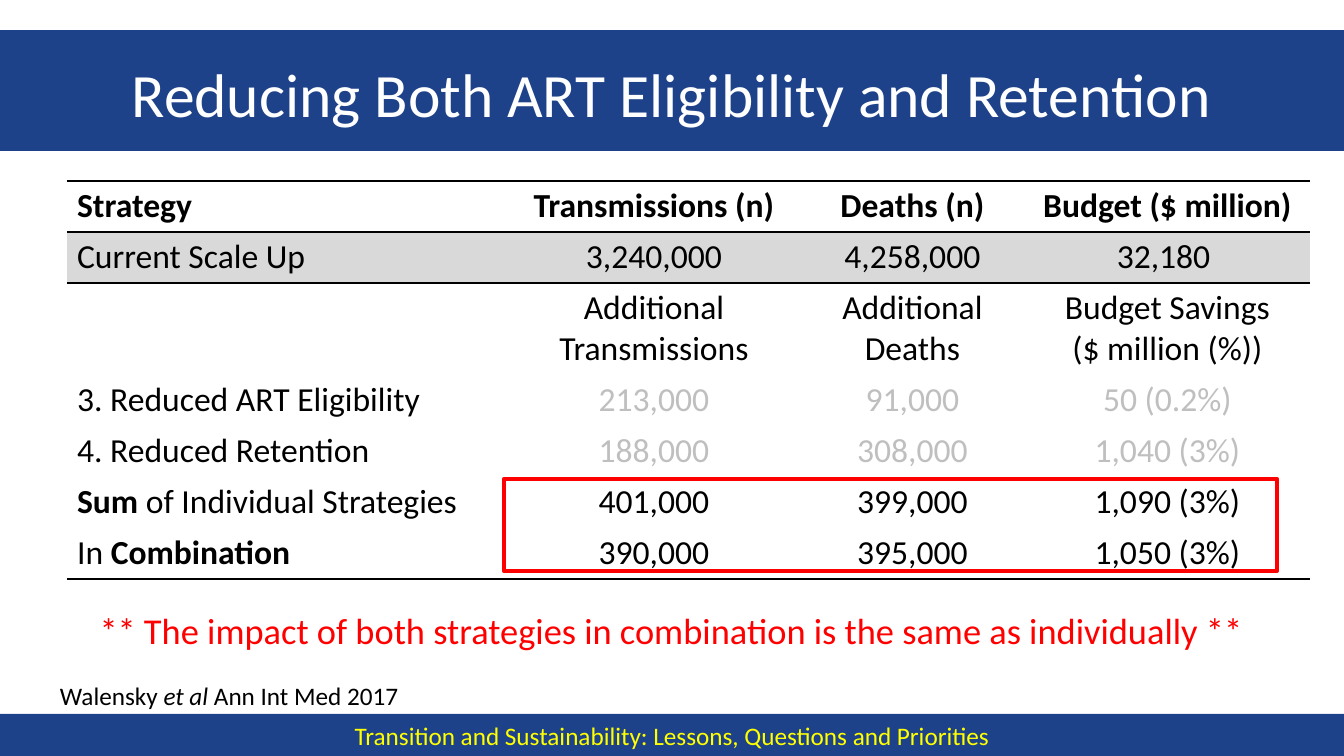
"""Build the slide on reducing both ART eligibility and retention."""
from lxml import etree
from pptx import Presentation
from pptx.dml.color import RGBColor
from pptx.enum.shapes import MSO_SHAPE as SHAPE
from pptx.enum.text import MSO_ANCHOR as ANCHOR, PP_ALIGN as ALIGN
from pptx.oxml import parse_xml
from pptx.oxml.ns import nsdecls, qn

PX = 914400 / 100.8
BLUE, GREY, BLACK, RED = "1E428A", "BFBFBF", "000000", "FF0000"
rgb = RGBColor.from_string


def box(left, top, width, height):
    return [round(v * PX) for v in (left, top, width, height)]


def write(tf, text, size=24, color=BLACK, align=ALIGN.CENTER, bold=False, emphasis="bold"):
    """Write lines of text; the parts between bars get the emphasis."""
    tf.word_wrap = True
    for i, line in enumerate(text.split("\n")):
        p = tf.add_paragraph() if i else tf.paragraphs[0]
        p.alignment = align
        for j, part in enumerate(line.split("|")):
            if part:
                r = p.add_run()
                r.text = part
                r.font.name, r.font.size = "Calibri", round(size * 12700)
                r.font.color.rgb = rgb(color)
                r.font.bold = bold
                if j % 2:
                    setattr(r.font, emphasis, True)


prs = Presentation()
prs.slide_width, prs.slide_height = round(1344 * PX), round(756 * PX)
s = prs.slides.add_slide(prs.slide_layouts[6])

for top, height, text in (
    (30, 121, ""),
    (714, 42, "Transition and Sustainability: Lessons, Questions and Priorities"),
):
    sp = s.shapes.add_shape(SHAPE.RECTANGLE, *box(0, top, 1344, height))
    sp.shadow.inherit = False
    sp.fill.solid()
    sp.fill.fore_color.rgb = rgb(BLUE)
    sp.line.fill.background()
    sp.text_frame.vertical_anchor = ANCHOR.MIDDLE
    write(sp.text_frame, text, size=18, color="FFFF00")

title = s.shapes.add_textbox(*box(67, 30, 1210, 126))
title.text_frame.vertical_anchor = ANCHOR.MIDDLE
write(title.text_frame, "Reducing Both ART Eligibility and Retention", size=44, color="FFFFFF")

rows = [
    ["Strategy", "Transmissions (n)", "Deaths (n)", "Budget ($ million)"],
    ["Current Scale Up", "3,240,000", "4,258,000", "32,180 "],
    ["", "Additional Transmissions", "Additional Deaths", "Budget Savings\n($ million (%))"],
    ["3. Reduced ART Eligibility", "213,000", "91,000", "50 (0.2%)"],
    ["4. Reduced Retention", "188,000", "308,000", "1,040 (3%)"],
    ["|Sum| of Individual Strategies", "401,000", "399,000", "1,090 (3%)"],
    ["In |Combination|", "390,000", "395,000", "1,050 (3%)"],
]
widths = [441, 292, 225, 285]
heights = [51, 51, 92, 51, 51, 51, 51]
ruled = {0, 1, 2, len(rows)}

frame = s.shapes.add_table(len(rows), len(widths), *box(67, 181, sum(widths), sum(heights)))
table = frame.table
table.first_row = table.horz_banding = False
for column, width in zip(table.columns, widths):
    column.width = round(width * PX)
for i, (row, height) in enumerate(zip(rows, heights)):
    table.rows[i].height = round(height * PX)
    for j, text in enumerate(row):
        cell = table.cell(i, j)
        write(
            cell.text_frame,
            text,
            color=GREY if j and i in (3, 4) else BLACK,
            align=ALIGN.CENTER if j else ALIGN.LEFT,
            bold=i == 0,
        )
        tc_pr = cell._tc.get_or_add_tcPr()
        for side, shown in (("L", False), ("R", False), ("T", i in ruled), ("B", i + 1 in ruled)):
            ln = parse_xml(f'<a:ln{side} {nsdecls("a")} w="12700"/>')
            if shown:
                fill = etree.SubElement(ln, qn("a:solidFill"))
                etree.SubElement(fill, qn("a:srgbClr"), val=BLACK)
            else:
                etree.SubElement(ln, qn("a:noFill"))
            tc_pr.append(ln)
        if i == 1:
            cell.fill.solid()
            cell.fill.fore_color.rgb = rgb("D9D9D9")
        else:
            cell.fill.background()

highlight = s.shapes.add_shape(SHAPE.RECTANGLE, *box(504, 479, 773, 92))
highlight.shadow.inherit = False
highlight.fill.background()
highlight.line.color.rgb = rgb(RED)
highlight.line.width = 3 * 12700

message = s.shapes.add_textbox(*box(67, 603, 1210, 54))
write(
    message.text_frame,
    "** The impact of both strategies in combination is the same as individually **",
    size=26,
    color=RED,
)

citation = s.shapes.add_textbox(*box(50, 675, 622, 40))
write(
    citation.text_frame,
    "Walensky |et al| Ann Int Med 2017",
    size=18,
    align=ALIGN.LEFT,
    emphasis="italic",
)

prs.save("out.pptx")
